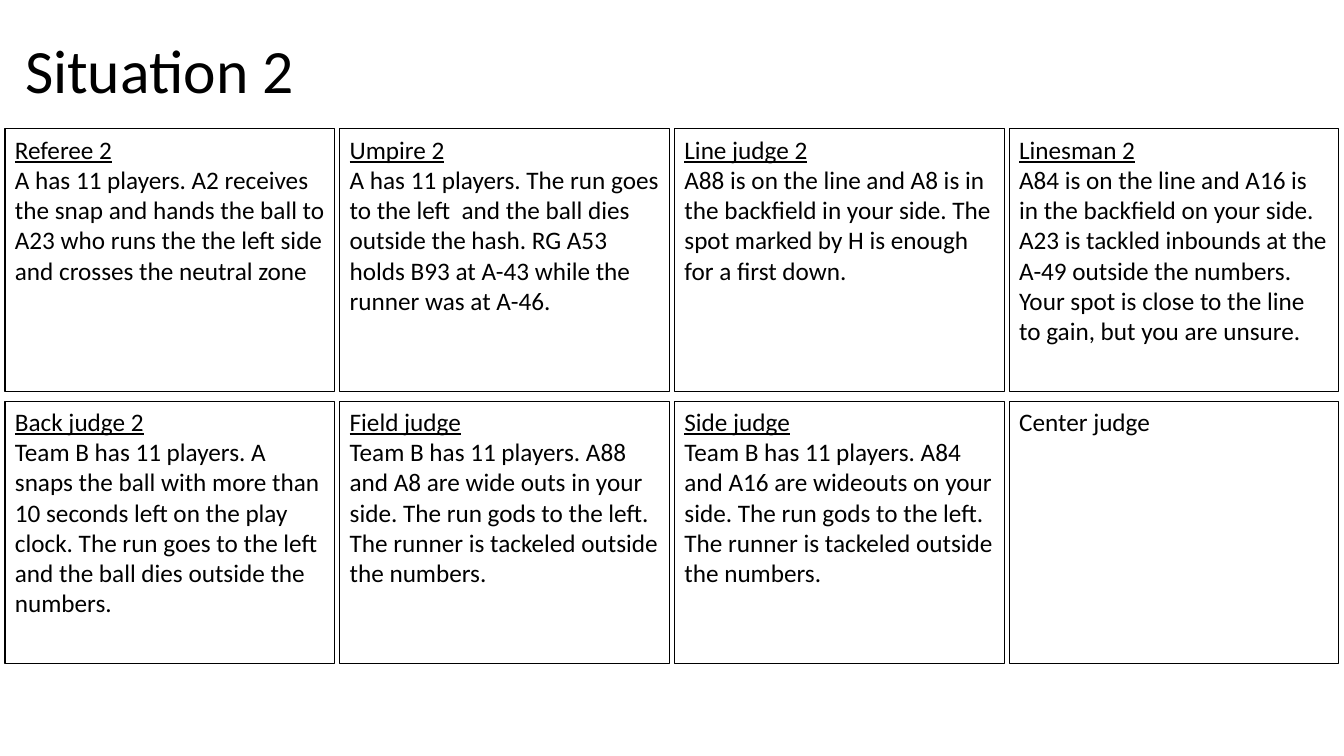
from pptx import Presentation
from pptx.dml.color import RGBColor
from pptx.enum.shapes import MSO_SHAPE
from pptx.enum.text import MSO_ANCHOR, PP_ALIGN
from pptx.util import Inches, Pt

BLACK = "000000"
COLUMNS = 4
GRID_LEFT, GRID_TOP = 0.05, 1.28
CARD_WIDTH, CARD_HEIGHT = 3.27, 2.6
COLUMN_GAP, ROW_GAP = 0.05, 0.1

ASSIGNMENTS = [
    ("Referee 2", "A has 11 players. A2 receives the snap and hands the ball to A23 "
     "who runs the the left side and crosses the neutral zone"),
    ("Umpire 2", "A has 11 players. The run goes to the left  and the ball dies outside "
     "the hash. RG A53 holds B93 at A-43 while the runner was at A-46."),
    ("Line judge 2", "A88 is on the line and A8 is in the backfield in your side. "
     "The spot marked by H is enough for a first down."),
    ("Linesman 2", "A84 is on the line and A16 is in the backfield on your side. "
     "A23 is tackled inbounds at the A-49 outside the numbers.  "
     "Your spot is close to the line to gain, but you are unsure."),
    ("Back judge 2", "Team B has 11 players. A snaps the ball with more than 10 seconds "
     "left on the play clock. The run goes to the left and the ball dies outside the numbers."),
    ("Field judge", "Team B has 11 players. A88 and A8 are wide outs in your side. "
     "The run gods to the left. The runner is tackeled outside the numbers."),
    ("Side judge", "Team B has 11 players. A84 and A16 are wideouts on your side. "
     "The run gods to the left. The runner is tackeled outside the numbers."),
    ("Center judge", ""),
]


def color(hex_code):
    return RGBColor.from_string(hex_code)


def style(paragraph, size, underline=False):
    paragraph.alignment = PP_ALIGN.LEFT
    for run in paragraph.runs:
        run.font.name = "Calibri"
        run.font.size = Pt(size)
        run.font.color.rgb = color(BLACK)
        run.font.underline = underline


def add_heading(slide, text, left, top, width, height):
    heading = slide.shapes.add_textbox(*map(Inches, (left, top, width, height)))
    frame = heading.text_frame
    frame.word_wrap = True
    frame.vertical_anchor = MSO_ANCHOR.MIDDLE
    frame.text = text
    frame.paragraphs[0].line_spacing = 0.9
    style(frame.paragraphs[0], 44)


def add_card(slide, role, duty, left, top, width, height):
    card = slide.shapes.add_shape(
        MSO_SHAPE.RECTANGLE, *map(Inches, (left, top, width, height)))
    card.shadow.inherit = False
    card.fill.background()
    card.line.color.rgb = color(BLACK)
    card.line.width = Pt(0.75)
    frame = card.text_frame
    frame.word_wrap = True
    frame.vertical_anchor = MSO_ANCHOR.TOP
    frame.text = role
    style(frame.paragraphs[0], 18, underline=bool(duty))
    if duty:
        description = frame.add_paragraph()
        description.text = duty
        style(description, 18)


def add_assignments(slide, left, top):
    for index, (role, duty) in enumerate(ASSIGNMENTS):
        row, column = divmod(index, COLUMNS)
        add_card(slide, role, duty,
                 left + column * (CARD_WIDTH + COLUMN_GAP),
                 top + row * (CARD_HEIGHT + ROW_GAP),
                 CARD_WIDTH, CARD_HEIGHT)


def main():
    deck = Presentation()
    deck.slide_width, deck.slide_height = Inches(13.33), Inches(7.5)
    slide = deck.slides.add_slide(deck.slide_layouts[6])
    add_heading(slide, "Situation 2", 0.15, 0, CARD_WIDTH, 1.45)
    add_assignments(slide, GRID_LEFT, GRID_TOP)
    deck.save("out.pptx")


if __name__ == "__main__":
    main()
